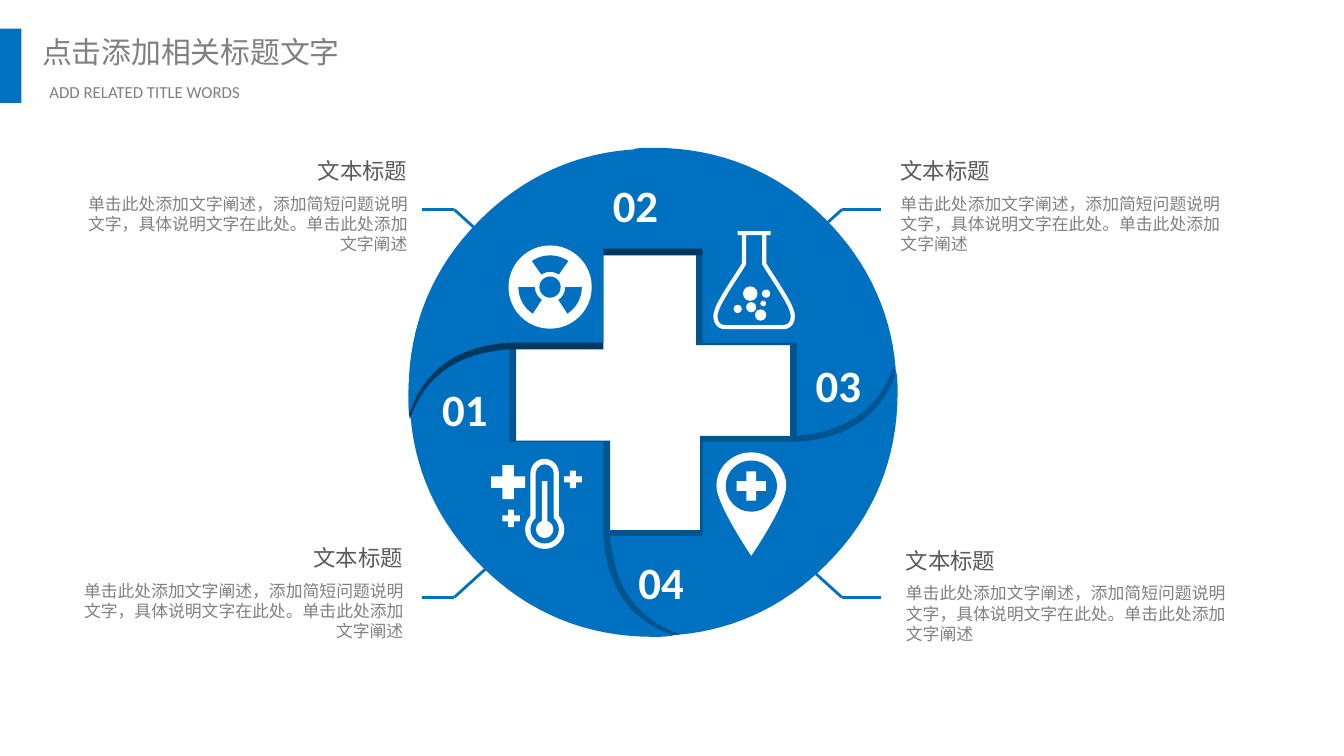
from math import cos, radians, sin

from lxml.etree import SubElement
from pptx import Presentation
from pptx.dml.color import RGBColor
from pptx.enum.shapes import MSO_CONNECTOR, MSO_SHAPE
from pptx.enum.text import MSO_ANCHOR, MSO_AUTO_SIZE, PP_ALIGN
from pptx.oxml.ns import qn
from pptx.util import Pt

BLUE = RGBColor(0x00, 0x70, 0xC0)
SHADE = RGBColor(0x00, 0x54, 0x90)
DEEP_SHADE = RGBColor(0x00, 0x38, 0x60)
WHITE = RGBColor(0xFF, 0xFF, 0xFF)
GREY = RGBColor(0x80, 0x80, 0x80)
DARK_GREY = RGBColor(0x59, 0x59, 0x59)
CHINESE = "Noto Sans CJK SC"
LATIN = "Calibri"

HEADING = "文本标题"
BODY = "单击此处添加文字阐述，添加简短问题说明文字，具体说明文字在此处。单击此处添加文字阐述"
CENTRE_X, CENTRE_Y = 349.9, 210.2
PETAL_START = (26.6, -77.8)
PETAL_EDGES = [
    [(24.5, -105.1), (12.2, -122.4), (-10.8, -130.3)],
    [(-7.2, -131), (-3.6, -131), (0, -131)],
    [(36, -131), (67, -118.1), (92.2, -92.9)],
    [(115.9, -69.1), (128.9, -40.3), (130.3, -7.2)],
    [(122.4, 13.7), (104.4, 25.2), (77, 26.6)],
    [(77, -26.6)],
    [(26.6, -26.6)],
]


def write(box, text, size, color, font=CHINESE, bold=False, align=PP_ALIGN.LEFT,
          wrap=False, inset=(0, 0), anchor=MSO_ANCHOR.TOP):
    frame = box.text_frame
    frame.auto_size = MSO_AUTO_SIZE.NONE
    frame.word_wrap = wrap
    frame.vertical_anchor = anchor
    frame.margin_left = frame.margin_right = Pt(inset[0])
    frame.margin_top = frame.margin_bottom = Pt(inset[1])
    para = frame.paragraphs[0]
    para.alignment = align
    if font == CHINESE:
        para.line_spacing = Pt(size * 1.2)
    span = para.add_run()
    span.text = text
    span.font.size = Pt(size)
    span.font.bold = bold
    span.font.color.rgb = color
    span.font.name = font
    SubElement(span.font._element, qn("a:ea")).set("typeface", font)


def text_box(page, left, top, width, height, *content, **style):
    box = page.shapes.add_textbox(Pt(left), Pt(top), Pt(width), Pt(height))
    write(box, *content, **style)


def paint(shape, color):
    shape.shadow.inherit = False
    shape.fill.solid()
    shape.fill.fore_color.rgb = color
    shape.line.fill.background()


def preset(page, kind, left, top, width, height, color, adjustments=()):
    shape = page.shapes.add_shape(kind, Pt(left), Pt(top), Pt(width), Pt(height))
    for index, value in enumerate(adjustments):
        shape.adjustments[index] = value
    paint(shape, color)


def disc(page, x, y, radius, color):
    preset(page, MSO_SHAPE.OVAL, x - radius, y - radius, 2 * radius, 2 * radius, color)


def cross(page, left, top, size):
    preset(page, MSO_SHAPE.CROSS, left, top, size, size, WHITE, [0.33])


def trace(start, edges, steps=16):
    points = [start]
    for edge in edges:
        if len(edge) == 1:
            points += edge
            continue
        corners = [points[-1], *edge]
        for step in range(1, steps + 1):
            t = step / steps
            weights = ((1 - t) ** 3, 3 * t * (1 - t) ** 2, 3 * t * t * (1 - t), t ** 3)
            points.append(tuple(sum(w * c[axis] for w, c in zip(weights, corners))
                                for axis in (0, 1)))
    return points


def outline(page, points, left=0, top=0, close=True):
    places = [(Pt(left + x), Pt(top + y)) for x, y in points]
    builder = page.shapes.build_freeform(*places[0])
    builder.add_line_segments(places[1:], close=close)
    shape = builder.convert_to_shape()
    shape.shadow.inherit = False
    return shape


def header(page, left, top):
    preset(page, MSO_SHAPE.RECTANGLE, left, top, 11.5, 39.8, BLUE)
    title = page.shapes.title
    title.left, title.top = Pt(left + 17), Pt(top)
    title.width, title.height = Pt(173), Pt(25.2)
    write(title, "点击添加相关标题文字", 16, GREY, inset=(5.6, 2.8))
    text_box(page, left + 20.9, top + 25.9, 160.6, 16.6, "ADD RELATED TITLE WORDS", 9,
             GREY, font=LATIN, wrap=True, inset=(5.6, 2.8))


def leader(page, start, end):
    line = page.shapes.add_connector(MSO_CONNECTOR.STRAIGHT, *map(Pt, start + end))
    line.line.color.rgb = BLUE
    line.line.width = Pt(1.5)
    SubElement(line._element.spPr, qn("a:effectLst"))


def callout(page, left, top, on_left, on_top):
    inward = 1 if on_left else -1
    end_x, bend_x = (226.1, 243.4) if on_left else (472, 451)
    line_y = 112.3 if on_top else 320
    tip = (bend_x + inward * 18.7, line_y + (17 if on_top else -17))
    leader(page, tip, (bend_x, line_y))
    leader(page, (bend_x, line_y), (end_x, line_y))
    align = PP_ALIGN.RIGHT if on_left else PP_ALIGN.LEFT
    heading_left = left + 131 if on_left else left
    text_box(page, heading_left, top, 48.3, 14.4, HEADING, 12, DARK_GREY, align=align)
    text_box(page, left, top + 19.4, 179.3, 32.4, BODY, 9, GREY, align=align, wrap=True)


def wheel(page, x, y):
    petal = trace(PETAL_START, PETAL_EDGES)
    shades = [(-3.6, 1.4, SHADE), (-1.4, -3.2, SHADE), (3.6, -0.7, SHADE), (0, 3.6, DEEP_SHADE)]
    for quarter, (shift_x, shift_y, shade) in enumerate(shades):
        turn = radians(90 * quarter)
        points = [(px * cos(turn) - py * sin(turn), px * sin(turn) + py * cos(turn))
                  for px, py in petal]
        paint(outline(page, points, x + shift_x, y + shift_y), shade)
        paint(outline(page, points, x, y), BLUE)
    numbers = [(-113, -5.7), (-21.6, -115.2), (87.1, -18.7), (-7.9, 87.1)]
    for number, (dx, dy) in enumerate(numbers, 1):
        text_box(page, x + dx, y + dy, 24.5, 28.8, f"{number:02}", 24, WHITE, font=LATIN,
                 bold=True, anchor=MSO_ANCHOR.MIDDLE)


def radiation_icon(page, left, top):
    x, y = left + 22.3, top + 22.3
    disc(page, x, y, 22.3, WHITE)
    for start, stop in ((235, 305), (0, 57), (123, 180)):
        preset(page, MSO_SHAPE.BLOCK_ARC, x - 17, y - 17, 34, 34, BLUE,
               [start * 0.6, stop * 0.6, 0.26])
    disc(page, x, y, 5.7, BLUE)


def flask_icon(page, left, top):
    preset(page, MSO_SHAPE.RECTANGLE, left + 13, top, 17.7, 2.2, WHITE)
    glass = trace((16.4, 1.5), [
        [(16.4, 17.6)],
        [(11, 26.5), (1.1, 40), (1.1, 45.5)],
        [(1.1, 51), (5, 51.5), (6.5, 51.5)],
        [(37.1, 51.5)],
        [(38.6, 51.5), (42.5, 51), (42.5, 45.5)],
        [(42.5, 40), (32.6, 26.5), (27.2, 17.6)],
        [(27.2, 1.5)],
    ])
    shape = outline(page, glass, left, top, close=False)
    shape.fill.background()
    shape.line.color.rgb = WHITE
    shape.line.width = Pt(2.2)
    bubbles = [(19.7, 33.5, 3.9), (28.2, 33.5, 2.2), (26.7, 38.8, 1.5),
               (13, 41.7, 2.2), (20.2, 40.8, 2.7), (25.3, 45, 3)]
    for x, y, radius in bubbles:
        disc(page, left + x, top + y, radius, WHITE)


def thermometer_icon(page, left, top):
    cross(page, left, top + 3.4, 18.2)
    cross(page, left + 5.9, top + 27.2, 9.4)
    cross(page, left + 39.1, top + 6.3, 9.4)
    x, bulb_y = left + 28.6, top + 37.8
    for radius, half, rise, color in ((10.5, 7.6, 0, WHITE), (7.6, 4.8, 3, BLUE)):
        preset(page, MSO_SHAPE.ROUNDED_RECTANGLE, x - half, top + rise, 2 * half,
               40 - rise, color, [0.5])
        disc(page, x, bulb_y, radius, color)
    preset(page, MSO_SHAPE.RECTANGLE, x - 1.5, top + 12, 3, 24, WHITE)
    disc(page, x, bulb_y, 4.7, WHITE)


def pin_icon(page, left, top):
    pin = trace((18.7, 0), [
        [(8.4, 0), (0, 8), (0, 18)], [(0, 28), (18.7, 55.4), (18.7, 55.4)],
        [(18.7, 55.4), (37.4, 28), (37.4, 18)], [(37.4, 8), (29, 0), (18.7, 0)],
    ])
    paint(outline(page, pin, left, top), WHITE)
    disc(page, left + 18.7, top + 18, 13.7, BLUE)
    cross(page, left + 10.9, top + 10.2, 15.6)


def main():
    deck = Presentation()
    deck.slide_width, deck.slide_height = Pt(720), Pt(405)
    page = deck.slides.add_slide(deck.slide_layouts[5])
    header(page, 0, 15.3)
    callout(page, 38.9, 84.2, True, True)
    callout(page, 482.4, 84.2, False, True)
    callout(page, 36.7, 291.6, True, False)
    callout(page, 485.3, 293, False, False)
    wheel(page, CENTRE_X, CENTRE_Y)
    radiation_icon(page, 272.4, 131.5)
    flask_icon(page, 382.2, 123.8)
    thermometer_icon(page, 263.2, 245.8)
    pin_icon(page, 383.8, 242.4)
    deck.save("out.pptx")


if __name__ == "__main__":
    main()
